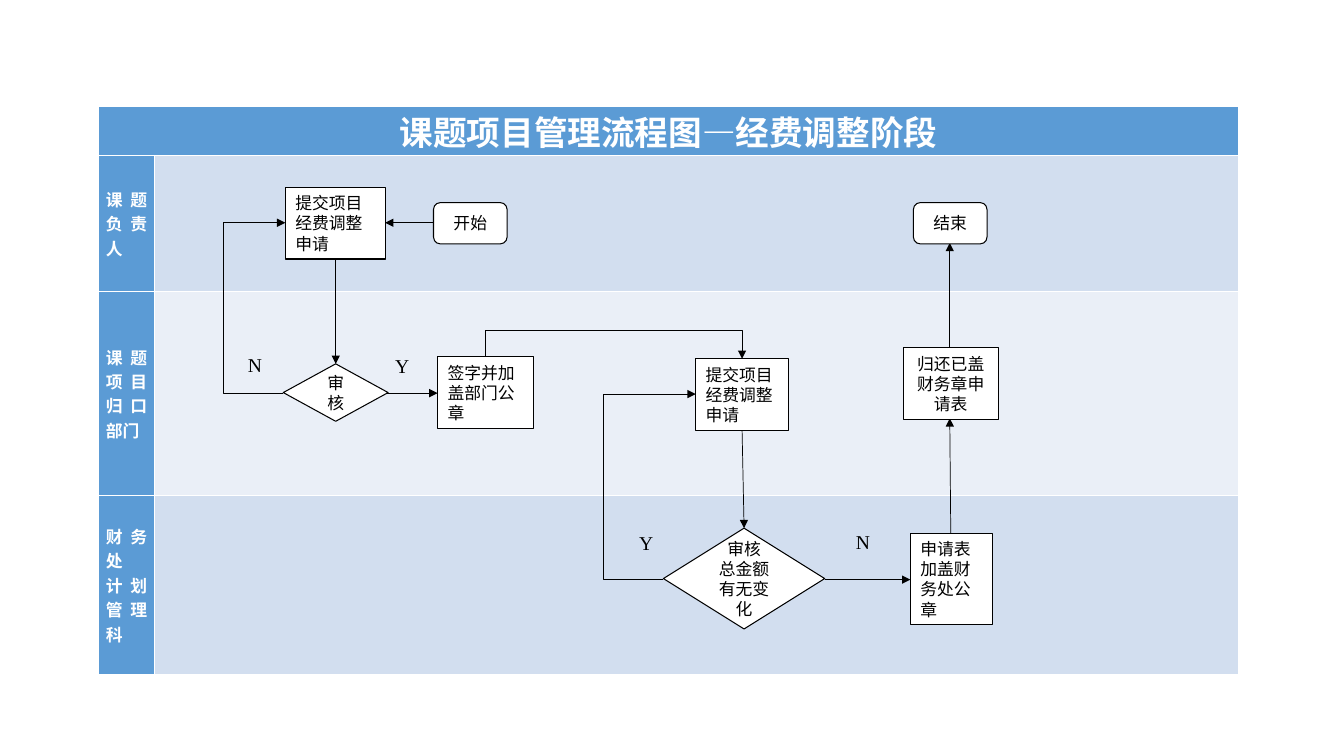
from lxml import etree
from pptx import Presentation
from pptx.dml.color import RGBColor
from pptx.enum.shapes import MSO_CONNECTOR, MSO_SHAPE
from pptx.enum.text import MSO_ANCHOR, MSO_AUTO_SIZE, PP_ALIGN
from pptx.oxml.ns import qn
from pptx.util import Inches, Pt

STRAIGHT = MSO_CONNECTOR.STRAIGHT
ELBOW = MSO_CONNECTOR.ELBOW
RECTANGLE = MSO_SHAPE.RECTANGLE
DIAMOND = MSO_SHAPE.DIAMOND
TERMINAL = MSO_SHAPE.FLOWCHART_ALTERNATE_PROCESS
MIDDLE = MSO_ANCHOR.MIDDLE
GROW = MSO_AUTO_SIZE.SHAPE_TO_FIT_TEXT
LEFT = PP_ALIGN.LEFT
CENTER = PP_ALIGN.CENTER
JUSTIFY = PP_ALIGN.JUSTIFY

BLACK = "000000"
WHITE = "FFFFFF"
BLUE = "5B9BD5"
LANES = [
    ("课题负责人", 1.35, "D2DEEF"),
    ("课题项目归口部门", 2.02, "EAEFF7"),
    ("财务处\n计划管理科", 1.78, "D2DEEF"),
]
STEPS = [
    (TERMINAL, "开始", 4.3, 2.01, 0.73, 0.41, CENTER),
    (TERMINAL, "结束", 9.06, 2.01, 0.73, 0.41, CENTER),
    (RECTANGLE, "提交项目经费调整申请", 2.83, 1.86, 0.99, 0.71, LEFT),
    (RECTANGLE, "签字并加盖部门公章", 4.34, 3.54, 0.95, 0.71, LEFT),
    (RECTANGLE, "提交项目经费调整申请", 6.9, 3.56, 0.92, 0.71, LEFT),
    (RECTANGLE, "归还已盖财务章申请表", 8.96, 3.45, 0.94, 0.71, CENTER),
    (RECTANGLE, "申请表加盖财务处公章", 9.03, 5.29, 0.81, 0.91, LEFT),
    (DIAMOND, "审核", 2.81, 3.61, 1.04, 0.57, CENTER),
    (DIAMOND, "审核\n总金额有无变化", 6.58, 5.24, 1.6, 1, CENTER),
]
ANSWERS = [
    ("N", 2.36, 3.45, 0.26),
    ("Y", 3.82, 3.46, 0.47),
    ("Y", 6.24, 5.22, 0.26),
    ("N", 8.39, 5.21, 0.33),
]
ARROWS = [
    ((4.3, 2.21), (3.82, 2.21), 0.75),
    ((3.33, 2.56), (3.33, 3.61), 0.5),
    ((3.84, 3.9), (4.34, 3.9), 0.75),
    ((7.36, 4.26), (7.38, 5.24), 0.5),
    ((8.18, 5.75), (9.03, 5.75), 0.75),
    ((9.43, 5.29), (9.42, 4.15), 0.5),
    ((9.42, 3.45), (9.42, 2.41), 0.75),
]


def color(value):
    return RGBColor.from_string(value)


def write(frame, text, size, font, tint, align, bold=False):
    frame.text = text
    for paragraph in frame.paragraphs:
        paragraph.alignment = align
        paragraph.font.size = Pt(size)
        paragraph.font.name = font
        paragraph.font.bold = bold
        paragraph.font.color.rgb = color(tint)


def fill_cell(cell, tint):
    cell.fill.solid()
    cell.fill.fore_color.rgb = color(tint)
    cell.margin_left = cell.margin_right = Inches(0.07)
    cell.margin_top = cell.margin_bottom = 0


def add_lanes(slide):
    table = slide.shapes.add_table(
        len(LANES) + 1, 2, Inches(0.98), Inches(1.06), Inches(11.3), Inches(5.62)
    ).table
    table.first_col = True
    table.columns[0].width = Inches(0.55)
    table.columns[1].width = Inches(10.75)
    table.rows[0].height = Inches(0.47)
    title = table.cell(0, 0)
    title.merge(table.cell(0, 1))
    fill_cell(title, BLUE)
    write(title.text_frame, "课题项目管理流程图—经费调整阶段", 24, "Calibri", WHITE, CENTER, True)
    for row, (name, height, tint) in enumerate(LANES, 1):
        table.rows[row].height = Inches(height)
        label, body = table.cell(row, 0), table.cell(row, 1)
        fill_cell(label, BLUE)
        fill_cell(body, tint)
        label.vertical_anchor = MIDDLE
        write(label.text_frame, name, 12, "Calibri", WHITE, JUSTIFY, True)
        label._tc.get_or_add_tcPr().set("vert", "eaVert")


def add_step(slide, kind, text, left, top, width, height, align):
    step = slide.shapes.add_shape(
        kind, Inches(left), Inches(top), Inches(width), Inches(height)
    )
    step.shadow.inherit = False
    step.fill.solid()
    step.fill.fore_color.rgb = color(WHITE)
    step.line.color.rgb = color(BLACK)
    step.line.width = Pt(0.75)
    frame = step.text_frame
    frame.word_wrap = True
    frame.vertical_anchor = MIDDLE
    if kind == RECTANGLE:
        frame.auto_size = GROW
    write(frame, text, 12, "Times New Roman", BLACK, align)


def add_answer(slide, text, left, top, width):
    box = slide.shapes.add_textbox(
        Inches(left), Inches(top), Inches(width), Inches(0.34)
    )
    box.text_frame.word_wrap = True
    box.text_frame.auto_size = GROW
    write(box.text_frame, text, 14, "Times New Roman", BLACK, LEFT)


def add_arrow(slide, start, end, weight, kind=STRAIGHT):
    arrow = slide.shapes.add_connector(
        kind, *(Inches(length) for length in (*start, *end))
    )
    arrow.line.color.rgb = color(BLACK)
    arrow.line.width = Pt(weight)
    etree.SubElement(arrow.line._get_or_add_ln(), qn("a:tailEnd"), type="triangle")
    etree.SubElement(arrow._element.spPr, qn("a:effectLst"))
    return arrow


def set_bend(arrow, ratio):
    guides = arrow._element.spPr.find(qn("a:prstGeom")).get_or_add_avLst()
    etree.SubElement(
        guides, qn("a:gd"), name="adj1", fmla=f"val {round(ratio * 100000)}"
    )


def add_side_loop(slide, start, end, bend_x):
    arrow = add_arrow(slide, start, end, 0.5, ELBOW)
    set_bend(arrow, (bend_x - start[0]) / (end[0] - start[0]))


def add_top_loop(slide, start, end, bend_y):
    center_x, center_y = (start[0] + end[0]) / 2, (start[1] + end[1]) / 2
    half_run, half_rise = (end[0] - start[0]) / 2, (end[1] - start[1]) / 2
    arrow = add_arrow(
        slide,
        (center_x - half_rise, center_y + half_run),
        (center_x + half_rise, center_y - half_run),
        0.5,
        ELBOW,
    )
    arrow._element.spPr.find(qn("a:xfrm")).set("rot", str(90 * 60000))
    set_bend(arrow, (bend_y - start[1]) / (end[1] - start[1]))


def main():
    deck = Presentation()
    deck.slide_width = Inches(13.33)
    deck.slide_height = Inches(7.5)
    page = deck.slides.add_slide(deck.slide_layouts[6])
    add_lanes(page)
    for arrow in ARROWS:
        add_arrow(page, *arrow)
    add_side_loop(page, (2.81, 3.9), (2.83, 2.21), 2.22)
    add_side_loop(page, (6.58, 5.75), (6.9, 3.91), 5.98)
    add_top_loop(page, (4.81, 3.54), (7.36, 3.56), 3.28)
    for step in STEPS:
        add_step(page, *step)
    for answer in ANSWERS:
        add_answer(page, *answer)
    deck.save("out.pptx")


if __name__ == "__main__":
    main()
